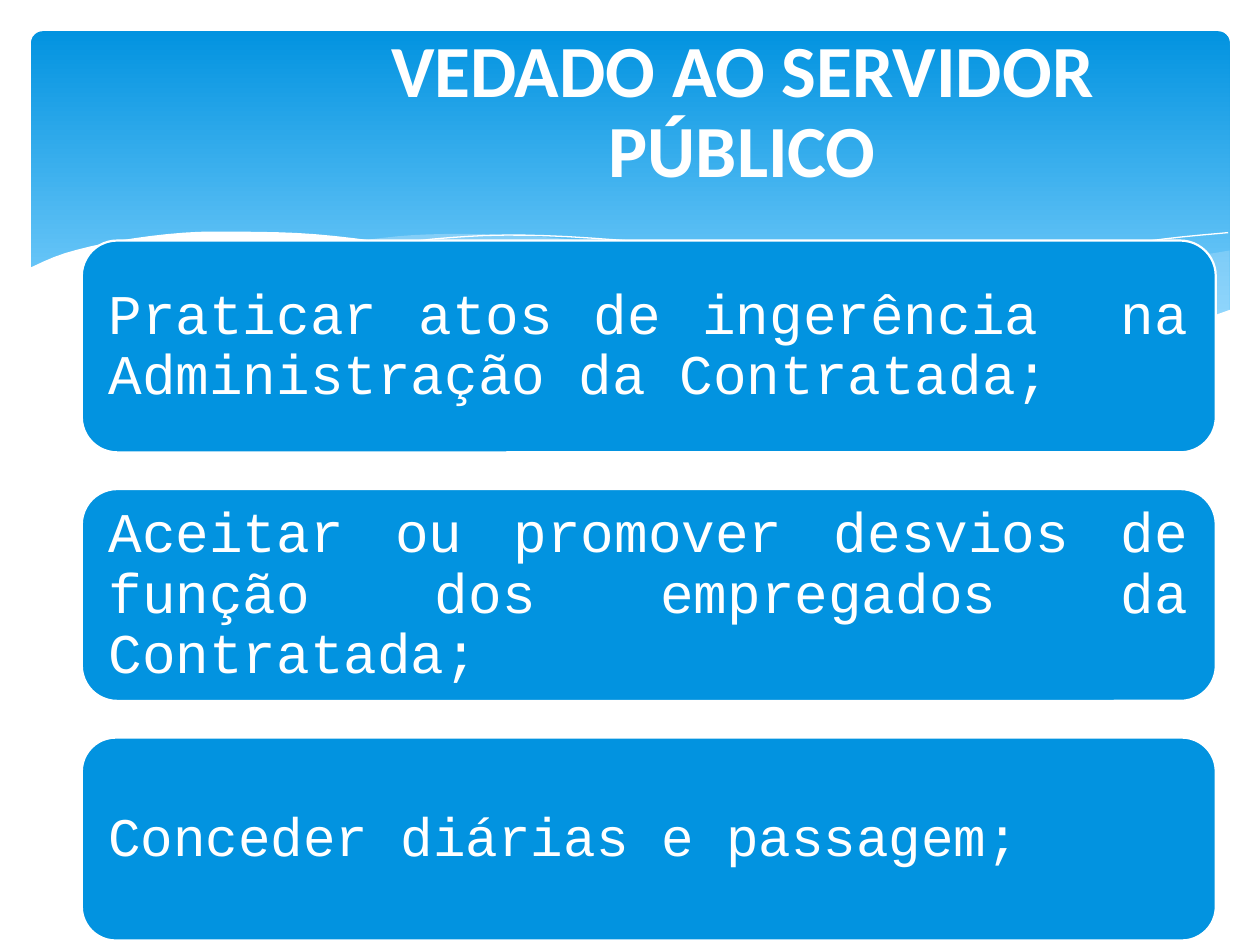
from lxml import etree
from pptx import Presentation
from pptx.dml.color import RGBColor
from pptx.enum.shapes import MSO_SHAPE
from pptx.enum.text import MSO_ANCHOR, PP_ALIGN
from pptx.oxml.ns import qn
from pptx.util import Cm, Pt

ROUND = MSO_SHAPE.ROUNDED_RECTANGLE
MIDDLE = MSO_ANCHOR.MIDDLE
CENTER, JUSTIFY = PP_ALIGN.CENTER, PP_ALIGN.JUSTIFY
BLUE, SKY, PALE, WHITE = "0293E0", "83D3FE", "C6E7FC", "FFFFFF"

# Wave edges, in cm from the top left corner of the banner
RIGHT_TOP = [(16.15, 6.1), (17.88, 5.79), (19.81, 5.38), (21.23, 5.03),
             (22.76, 4.67), (24.16, 4.42)]
RIGHT_LOW = [(24.16, 5.64), (22.94, 6.05), (21.74, 6.3), (20.04, 6.43),
             (18.29, 6.35), (16.15, 6.1)]
MID_TOP = [(6.63, 4.22), (7.7, 4.11), (9.02, 4.09), (10.59, 4.17),
           (12.42, 4.39), (14.2, 4.72), (16.33, 5.23), (18.19, 5.66),
           (19.86, 5.97), (22.05, 6.3)]
MID_LOW = [(22.05, 6.3), (20.65, 6.43), (19, 6.4), (17.37, 6.27),
           (15.47, 5.99), (12.83, 5.46), (10.77, 5), (9.09, 4.62),
           (8.05, 4.42), (6.63, 4.22)]
FALL = [(7.21, 4.32), (8.1, 4.19), (9.55, 4.11), (11.28, 4.17), (13.49, 4.37),
        (15.52, 4.65), (17.83, 5.11), (20.47, 5.74), (22.4, 6.27)]
RISE = [(14.94, 5.89), (17.02, 5.33), (19.08, 4.85), (21.36, 4.42),
        (22.83, 4.19), (24.13, 4.06)]
FRONT = [(-0.05, 4.78), (0.69, 4.47), (1.78, 4.22), (3.07, 4.06), (4.27, 4.04),
         (5.72, 4.09), (7.37, 4.29), (9.3, 4.62), (10.72, 4.95), (12.8, 5.44),
         (14.68, 5.82), (16.84, 6.17), (18.69, 6.35), (20.27, 6.4),
         (21.59, 6.3), (22.73, 6.1), (24.18, 5.61)]
BASE = [(24.18, 7.72), (-0.05, 7.72)]

CARDS = [
    ("Praticar atos de ingerência  na Administração da Contratada;", 4.27, 32),
    ("Aceitar ou promover desvios de função dos empregados da Contratada;", 4.27, 32),
    ("Conceder diárias e passagem;", 4.09, 31),
]


def color(code):
    return RGBColor.from_string(code)


def write(shape, text, size, font, align, bold=False, inset=(0.33, 0.55)):
    frame = shape.text_frame
    frame.word_wrap = True
    frame.vertical_anchor = MIDDLE
    frame.margin_left = frame.margin_right = Cm(inset[0])
    frame.margin_top = frame.margin_bottom = Cm(inset[1])
    para = frame.paragraphs[0]
    para.alignment = align
    para.line_spacing = 0.9
    run = para.add_run()
    run.text = text
    run.font.size = Pt(size)
    run.font.name = font
    run.font.bold = bold
    run.font.color.rgb = color(WHITE)


def smooth(knots, steps=4):
    """Points of a Catmull-Rom curve through the knots."""
    ends = [knots[0], *knots, knots[-1]]
    points = [knots[0]]
    for a, b, c, d in zip(ends, ends[1:], ends[2:], ends[3:]):
        for step in range(1, steps + 1):
            t = step / steps
            points.append(tuple(
                (2 * q + (r - p) * t + (2 * p - 5 * q + 4 * r - s) * t ** 2
                 + (3 * q - p - 3 * r + s) * t ** 3) / 2
                for p, q, r, s in zip(a, b, c, d)))
    return points


def trace(slide, left, top, points, close):
    spots = [(Cm(left + x), Cm(top + y)) for x, y in points]
    path = slide.shapes.build_freeform(*spots[0], scale=1.0)
    path.add_line_segments(spots[1:], close=close)
    shape = path.convert_to_shape()
    shape.shadow.inherit = False
    return shape


def fill_wave(slide, left, top, points, code, alpha=100):
    shape = trace(slide, left, top, points, True)
    shape.fill.solid()
    shape.fill.fore_color.rgb = color(code)
    shape.line.fill.background()
    if alpha < 100:
        tone = shape.fill._xPr.find(".//" + qn("a:srgbClr"))
        etree.SubElement(tone, qn("a:alpha"), val=str(alpha * 1000))


def line_wave(slide, left, top, points):
    shape = trace(slide, left, top, points, False)
    shape.fill.background()
    shape.line.color.rgb = color(WHITE)
    shape.line.width = Pt(0)


def add_banner(slide, left, top, width, height):
    panel = slide.shapes.add_shape(ROUND, Cm(left), Cm(top), Cm(width), Cm(height))
    panel.adjustments[0] = 0.034
    panel.shadow.inherit = False
    panel.line.fill.background()
    panel.fill.gradient()
    panel.fill.gradient_angle = 270
    for stop, code, place in zip(panel.fill.gradient_stops, (BLUE, SKY), (0, 0.9)):
        stop.color.rgb = color(code)
        stop.position = place
    fill_wave(slide, left, top, smooth(RIGHT_TOP) + smooth(RIGHT_LOW), PALE, 29)
    fill_wave(slide, left, top, smooth(MID_TOP) + smooth(MID_LOW), PALE, 40)
    for edge in (FALL, RISE):
        line_wave(slide, left, top, smooth(edge))
    fill_wave(slide, left, top, smooth(FRONT) + BASE, WHITE)


def add_title(slide, left, top, width, height):
    box = slide.shapes.add_textbox(Cm(left), Cm(top), Cm(width), Cm(height))
    write(box, "VEDADO AO SERVIDOR PÚBLICO", 42, "Calibri", CENTER,
          bold=True, inset=(0.38, 0.53))


def add_cards(slide, left, top, width, gap):
    for text, height, size in CARDS:
        card = slide.shapes.add_shape(ROUND, Cm(left), Cm(top), Cm(width), Cm(height))
        card.adjustments[0] = 0.167
        card.shadow.inherit = False
        card.fill.solid()
        card.fill.fore_color.rgb = color(BLUE)
        card.line.color.rgb = color(WHITE)
        card.line.width = Pt(1.25)
        write(card, text, size, "Courier New", JUSTIFY)
        top += height + gap


def main():
    deck = Presentation()
    deck.slide_width, deck.slide_height = Cm(25.4), Cm(19.05)
    slide = deck.slides.add_slide(deck.slide_layouts[6])
    add_banner(slide, 0.63, 0.63, 24.16, 6.86)
    add_cards(slide, 1.65, 4.85, 22.86, 0.74)
    add_title(slide, 5.44, 0.84, 19.05, 2.9)
    deck.save("out.pptx")


if __name__ == "__main__":
    main()
